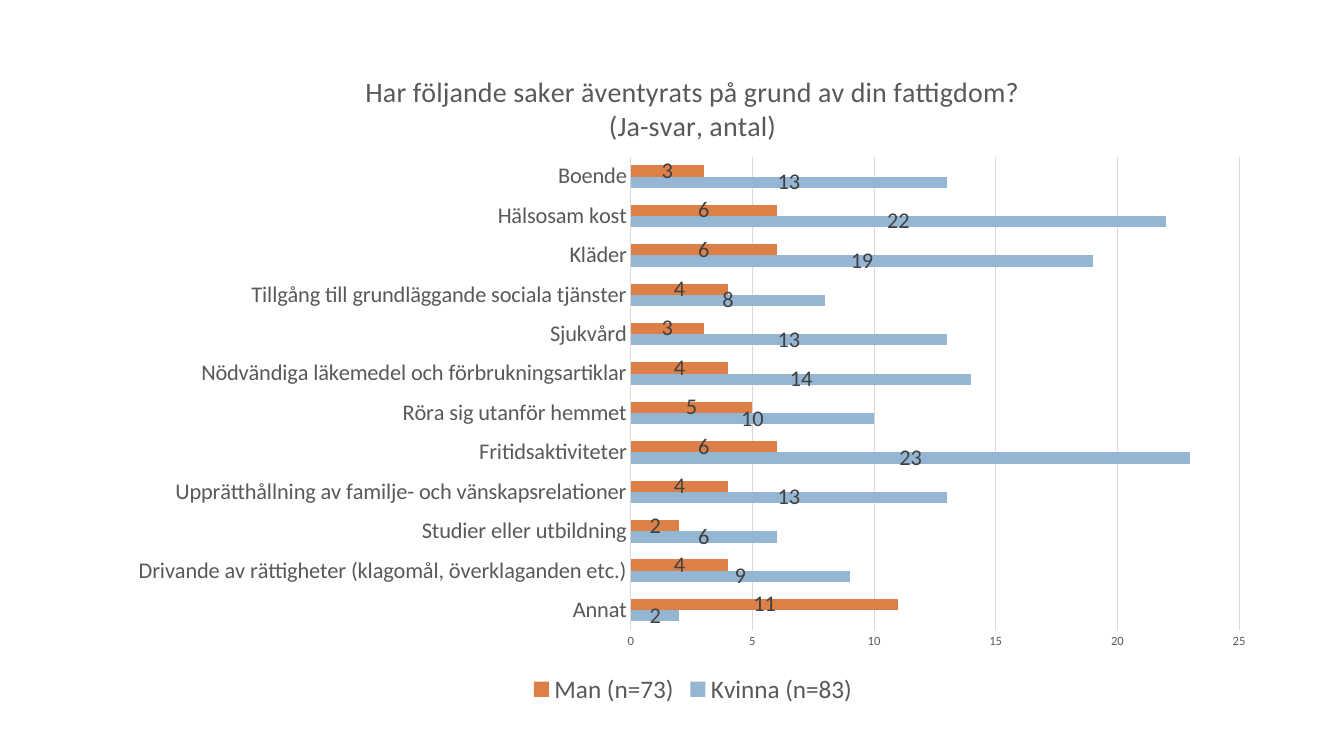
import pptx
import pptx.chart.data
import pptx.dml.color
import pptx.enum.chart
import pptx.oxml
import pptx.oxml.ns
import pptx.util

Pt = pptx.util.Pt
xl = pptx.enum.chart
GREY, GRID, DARK = "595959", "D9D9D9", "404040"

ANSWERS = [
    ("Annat", 2, 11),
    ("Drivande av rättigheter (klagomål, överklaganden etc.)", 9, 4),
    ("Studier eller utbildning", 6, 2),
    ("Upprätthållning av familje- och vänskapsrelationer", 13, 4),
    ("Fritidsaktiviteter", 23, 6),
    ("Röra sig utanför hemmet", 10, 5),
    ("Nödvändiga läkemedel och förbrukningsartiklar", 14, 4),
    ("Sjukvård", 13, 3),
    ("Tillgång till grundläggande sociala tjänster", 8, 4),
    ("Kläder", 19, 6),
    ("Hälsosam kost", 22, 6),
    ("Boende", 13, 3),
]


def rgb(value):
    return pptx.dml.color.RGBColor.from_string(value)


class Deck:
    """Hold the chart style and the current slide."""

    font_name = "Calibri"

    def __init__(self, prs):
        self.s = prs.slides.add_slide(prs.slide_layouts[6])

    def font(self, font, size, color=GREY):
        font.name = self.font_name
        font.size = Pt(size)
        font.bold = False
        font.color.rgb = rgb(color)

    def line(self, fmt):
        fmt.line.color.rgb = rgb(GRID)
        fmt.line.width = Pt(0.75)

    def place(self, element, index, **fractions):
        for old in element.findall(pptx.oxml.ns.qn("c:layout")):
            element.remove(old)
        modes = "".join(f'<c:{k}Mode val="edge"/>' for k in "xy")
        sizes = "".join(f'<c:{k} val="{v}"/>' for k, v in fractions.items())
        target = '<c:layoutTarget val="inner"/>' if "w" in fractions else ""
        element.insert(index, pptx.oxml.parse_xml(
            f'<c:layout {pptx.oxml.ns.nsdecls("c")}><c:manualLayout>'
            f"{target}{modes}{sizes}</c:manualLayout></c:layout>"))

    def bar_chart(self, box, rows, series):
        data = pptx.chart.data.CategoryChartData()
        data.categories = [row[0] for row in rows]
        for i, (name, color) in enumerate(series, 1):
            data.add_series(name, [row[i] for row in rows])
        chart = self.s.shapes.add_chart(
            xl.XL_CHART_TYPE.BAR_CLUSTERED, *map(Pt, box), data).chart
        self.font(chart.font, 10, "000000")
        plot = chart.plots[0]
        plot.gap_width = 150
        plot.overlap = 0
        plot.vary_by_categories = False
        for ser, (name, color) in zip(plot.series, series):
            ser.format.fill.solid()
            ser.format.fill.fore_color.rgb = rgb(color)
            labels = ser.data_labels
            labels.show_value = True
            labels.position = xl.XL_LABEL_POSITION.CENTER
            self.font(labels.font, 16, DARK)
        self.place(chart.plots[0]._element.getparent(), 0,
                   x=0.446, y=0.168, w=0.528, h=0.712)
        return chart

    def title(self, chart, text):
        tf = chart.chart_title.text_frame
        tf.text = text
        for p in tf.paragraphs:
            for r in p.runs:
                self.font(r.font, 20)
        chart.chart_title.include_in_layout = False
        self.place(chart.chart_title._element, 1, x=0.213, y=0.037)

    def axes(self, chart, top, step):
        cat, val = chart.category_axis, chart.value_axis
        for axis, size in ((cat, 16), (val, 9)):
            axis.major_tick_mark = xl.XL_TICK_MARK.NONE
            axis.minor_tick_mark = xl.XL_TICK_MARK.NONE
            self.font(axis.tick_labels.font, size)
        self.line(cat.format)
        val.format.line.fill.background()
        val.minimum_scale, val.maximum_scale = 0, top
        val.major_unit = step
        val.has_major_gridlines = True
        self.line(val.major_gridlines.format)

    def legend(self, chart):
        chart.has_legend = True
        chart.legend.position = xl.XL_LEGEND_POSITION.BOTTOM
        chart.legend.include_in_layout = False
        self.font(chart.legend.font, 18)


def main():
    prs = pptx.Presentation()
    prs.slide_width, prs.slide_height = Pt(960), Pt(540)
    deck = Deck(prs)
    chart = deck.bar_chart((83.5, 32.4, 823, 474.5), ANSWERS,
                           [("Kvinna (n=83)", "94B6D2"), ("Man (n=73)", "DD8047")])
    deck.title(chart, "Har följande saker äventyrats på grund av din fattigdom?\n(Ja-svar, antal)")
    deck.axes(chart, 25, 5)
    deck.legend(chart)
    prs.save("out.pptx")


if __name__ == "__main__":
    main()
